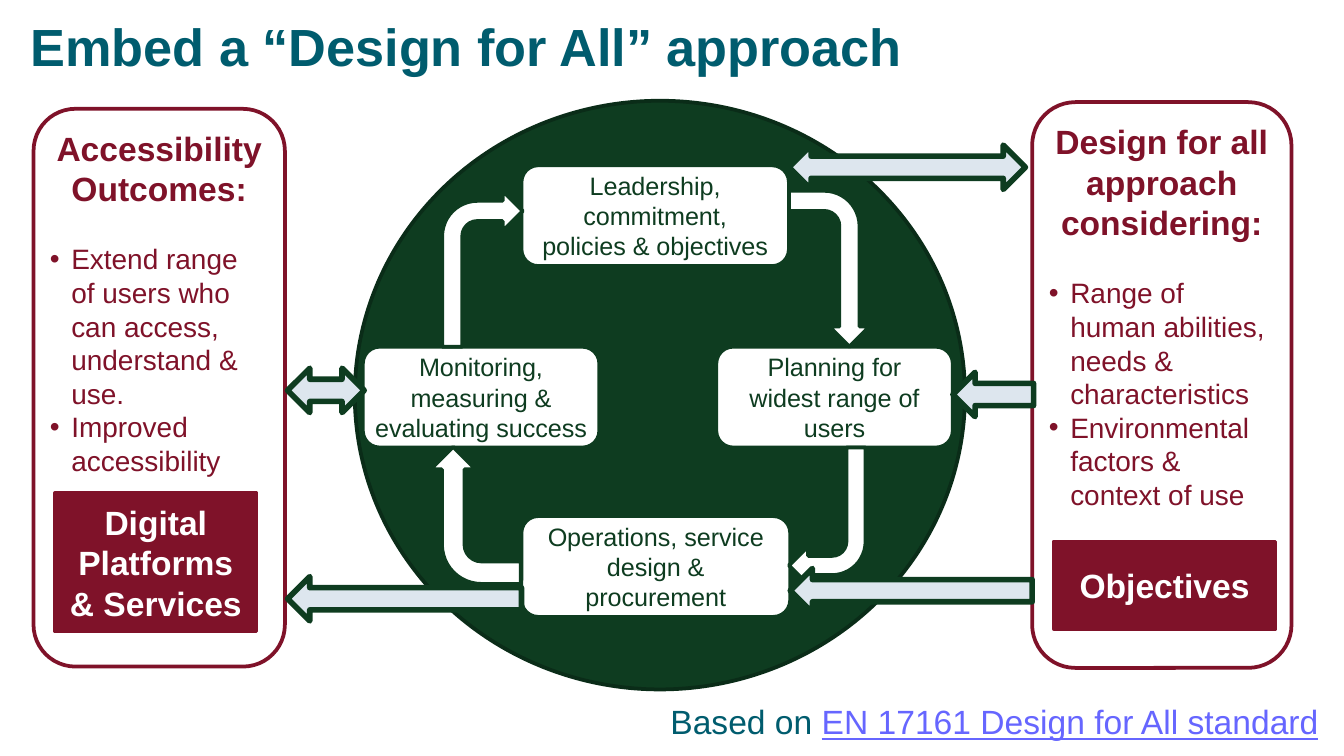
from dataclasses import dataclass

from lxml import etree
from pptx import Presentation
from pptx.dml.color import RGBColor
from pptx.enum.shapes import MSO_SHAPE
from pptx.enum.text import MSO_ANCHOR, PP_ALIGN
from pptx.oxml.ns import qn
from pptx.util import Inches, Pt

ELLIPSE = MSO_SHAPE.OVAL
RECTANGLE = MSO_SHAPE.RECTANGLE
ROUNDED = MSO_SHAPE.ROUNDED_RECTANGLE
BENT_ARROW = MSO_SHAPE.BENT_ARROW
RIGHT_ARROW = MSO_SHAPE.RIGHT_ARROW
DOUBLE_ARROW = MSO_SHAPE.LEFT_RIGHT_ARROW
TOP, MIDDLE, BOTTOM = MSO_ANCHOR.TOP, MSO_ANCHOR.MIDDLE, MSO_ANCHOR.BOTTOM
LEFT, CENTER = PP_ALIGN.LEFT, PP_ALIGN.CENTER

WHITE = RGBColor(0xFF, 0xFF, 0xFF)
TEAL = RGBColor(0x00, 0x5C, 0x6E)
GREEN = RGBColor(0x0E, 0x3C, 0x20)
DARK_GREEN = RGBColor(0x0A, 0x2C, 0x18)
MAROON = RGBColor(0x7F, 0x12, 0x29)
PALE_BLUE = RGBColor(0xDD, 0xE6, 0xEE)
LINK_BLUE = RGBColor(0x66, 0x66, 0xFF)

TITLE_FORMAT = {"size": Pt(28), "bold": True}
STEP_FORMAT = {"size": Pt(13.5), "bold": False}
HEADING_FORMAT = {"size": Pt(18), "bold": True}
BULLET_FORMAT = {"size": Pt(15), "bold": False}
SOURCE_FORMAT = {"size": Pt(18), "bold": False}
LINK_FORMAT = {**SOURCE_FORMAT, "underline": True}


@dataclass(frozen=True)
class Box:
    left: float
    top: float
    width: float
    height: float

    def lengths(self):
        return [Inches(v) for v in (self.left, self.top, self.width, self.height)]


@dataclass(frozen=True)
class Step:
    box: Box
    text: str
    side_margin: float = 0.1


@dataclass(frozen=True)
class Arrow:
    kind: MSO_SHAPE
    box: Box
    rotation: int = 0


@dataclass(frozen=True)
class Panel:
    box: Box
    heading: str
    bullets: tuple[str, ...]
    label_box: Box
    label: str


STEPS = (
    Step(Box(3.88, 1.23, 1.99, 0.75), "Leadership, commitment, policies & objectives"),
    Step(Box(5.33, 2.58, 1.76, 0.75), "Planning for widest range of users"),
    Step(Box(2.7, 2.58, 1.76, 0.75), "Monitoring, measuring & evaluating success", 0.03),
    Step(Box(3.88, 3.84, 2, 0.75), "Operations, service design & procurement"),
)
CYCLE_ARROWS = (
    Arrow(BENT_ARROW, Box(5.59, 1.7, 1.16, 0.6), 90),
    Arrow(BENT_ARROW, Box(3.29, 1.42, 0.6, 1.16)),
    Arrow(BENT_ARROW, Box(3.03, 3.5, 1.02, 0.67), 270),
    Arrow(BENT_ARROW, Box(5.87, 3.33, 0.57, 1.02), 180),
)
PANELS = (
    Panel(
        Box(7.68, 0.76, 1.93, 4.21),
        "Design for all approach considering:",
        ("Range of human abilities, needs & characteristics",
         "Environmental factors & context of use"),
        Box(7.84, 4.03, 1.65, 0.65),
        "Objectives",
    ),
    Panel(
        Box(0.25, 0.81, 1.87, 4.15),
        "Accessibility Outcomes:",
        ("Extend range of users who can access, understand & use.",
         "Improved accessibility"),
        Box(0.41, 3.67, 1.5, 1.03),
        "Digital Platforms & Services",
    ),
)
EXCHANGE_ARROWS = (
    Arrow(DOUBLE_ARROW, Box(5.87, 1.08, 1.76, 0.33)),
    Arrow(RIGHT_ARROW, Box(7.09, 2.77, 0.6, 0.33), 180),
    Arrow(RIGHT_ARROW, Box(5.88, 4.23, 1.8, 0.33), 180),
    Arrow(RIGHT_ARROW, Box(2.14, 4.29, 1.74, 0.33), 180),
    Arrow(DOUBLE_ARROW, Box(2.14, 2.74, 0.57, 0.33)),
)


def add_figure(slide, kind: MSO_SHAPE, box: Box, fill: RGBColor, line: RGBColor, weight=2):
    shape = slide.shapes.add_shape(kind, *box.lengths())
    shape.shadow.inherit = False
    shape.fill.solid()
    shape.fill.fore_color.rgb = fill
    shape.line.color.rgb = line
    shape.line.width = Pt(weight)
    return shape


def set_frame(shape, anchor: MSO_ANCHOR, side_margin=0.1, wrap=True):
    frame = shape.text_frame
    values = {
        "word_wrap": wrap,
        "vertical_anchor": anchor,
        "margin_left": Inches(side_margin),
        "margin_right": Inches(side_margin),
    }
    for name, value in values.items():
        setattr(frame, name, value)
    return frame


def write(paragraph, text: str, values: dict, color: RGBColor, alignment=CENTER) -> None:
    paragraph.alignment = alignment
    run = paragraph.add_run()
    run.text = text
    run.font.name = "Arial"
    run.font.color.rgb = color
    for name, value in values.items():
        setattr(run.font, name, value)


def add_bullet(paragraph) -> None:
    properties = paragraph._p.get_or_add_pPr()
    properties.set("marL", str(Inches(0.16)))
    properties.set("indent", str(Inches(-0.16)))
    font = etree.SubElement(properties, qn("a:buFont"))
    font.set("typeface", "Arial")
    etree.SubElement(properties, qn("a:buChar")).set("char", "•")


def add_step(slide, step: Step) -> None:
    shape = add_figure(slide, ROUNDED, step.box, WHITE, GREEN)
    frame = set_frame(shape, MIDDLE, step.side_margin)
    write(frame.paragraphs[0], step.text, STEP_FORMAT, GREEN)


def add_arrow(slide, arrow: Arrow, fill: RGBColor, weight: float) -> None:
    shape = add_figure(slide, arrow.kind, arrow.box, fill, GREEN, weight)
    shape.rotation = arrow.rotation


def add_panel(slide, panel: Panel) -> None:
    shape = add_figure(slide, ROUNDED, panel.box, WHITE, MAROON)
    frame = set_frame(shape, TOP, 0.03)
    heading = frame.paragraphs[0]
    write(heading, panel.heading, HEADING_FORMAT, MAROON)
    heading.space_after = Pt(18)
    for text in panel.bullets:
        paragraph = frame.add_paragraph()
        add_bullet(paragraph)
        write(paragraph, text, BULLET_FORMAT, MAROON, LEFT)
    label = add_figure(slide, RECTANGLE, panel.label_box, MAROON, MAROON)
    label_frame = set_frame(label, MIDDLE)
    write(label_frame.paragraphs[0], panel.label, HEADING_FORMAT, WHITE)


def main() -> None:
    presentation = Presentation()
    presentation.slide_width = Inches(10)
    presentation.slide_height = Inches(10 * 9 / 16)
    slide = presentation.slides.add_slide(presentation.slide_layouts[6])

    title = slide.shapes.add_textbox(*Box(0.13, 0.13, 8.19, 0.49).lengths())
    title_frame = set_frame(title, BOTTOM)
    write(title_frame.paragraphs[0], "Embed a “Design for All” approach", TITLE_FORMAT, TEAL, LEFT)

    add_figure(slide, ELLIPSE, Box(2.64, 0.75, 4.54, 4.38), GREEN, DARK_GREEN)
    for step in STEPS:
        add_step(slide, step)
    for arrow in CYCLE_ARROWS:
        add_arrow(slide, arrow, WHITE, 2)
    for panel in PANELS:
        add_panel(slide, panel)
    for arrow in EXCHANGE_ARROWS:
        add_arrow(slide, arrow, PALE_BLUE, 3)

    source = slide.shapes.add_textbox(*Box(4.89, 5.17, 5.07, 0.4).lengths())
    source_line = set_frame(source, TOP, wrap=False).paragraphs[0]
    write(source_line, "Based on ", SOURCE_FORMAT, TEAL, LEFT)
    write(source_line, "EN 17161 Design for All standard", LINK_FORMAT, LINK_BLUE, LEFT)

    presentation.save("out.pptx")


if __name__ == "__main__":
    main()
